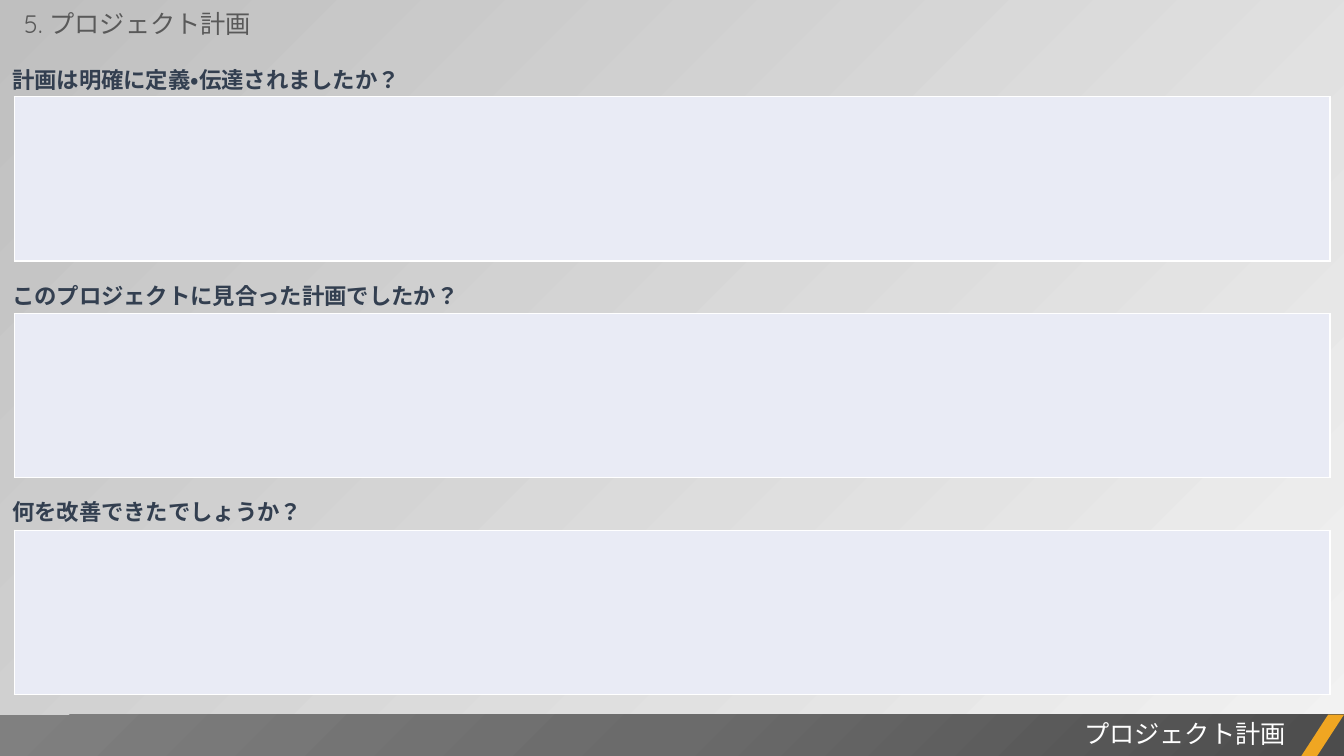
from lxml import etree
from pptx import Presentation
from pptx.dml.color import RGBColor
from pptx.enum import lang, shapes, text
from pptx.oxml import ns
from pptx.util import Inches, Pt

TITLE = "プロジェクト計画"
LABEL = dict(size=Pt(16), bold=True)
# label, label top, line spacing
ASKS = [
    ("計画は明確に定義・伝達されましたか？", 0.56, Pt(21.5)),
    ("このプロジェクトに見合った計画でしたか？", 2.71, Pt(21.5)),
    ("何を改善できたでしょうか？", 4.83, 1.2),
]


def rgb(code):
    return RGBColor.from_string(code)


def put(item, **vals):
    """Set each given attribute on the item."""
    for key, val in vals.items():
        setattr(item, key, val)


def node(top, tag, **attrs):
    """Append a DrawingML element."""
    return etree.SubElement(top, ns.qn("a:" + tag), attrs)


class Deck:
    font = "Quicksand"

    def __init__(self):
        self.prs = Presentation()
        put(self.prs, slide_width=Inches(13.33), slide_height=Inches(7.5))
        self.slide = self.prs.slides.add_slide(self.prs.slide_layouts[5])

    def shade(self, fill, root, stops, angle=None):
        """Give a gradient; without an angle it spreads from bottom right."""
        fill.gradient()
        grad = root.find(".//" + ns.qn("a:gradFill"))
        for kid in list(grad):
            grad.remove(kid)
        row = node(grad, "gsLst")
        for pos, code in stops:
            stop = node(row, "gs", pos=str(pos * 1000))
            node(stop, "srgbClr", val=code)
        if angle is None:
            way = node(grad, "path", path="circle")
            node(way, "fillToRect", l="100000", t="100000")
        else:
            node(grad, "lin", ang=str(angle * 60000), scaled="0")

    def letter(self, box, words, color, inset=(0.1, 0.05), para=None, **font):
        """Fill a box with one styled paragraph."""
        frame = box.text_frame
        side, edge = map(Inches, inset)
        put(frame, text=words, word_wrap=True,
            auto_size=text.MSO_AUTO_SIZE.SHAPE_TO_FIT_TEXT,
            vertical_anchor=text.MSO_ANCHOR.TOP,
            margin_left=side, margin_right=side,
            margin_top=edge, margin_bottom=edge)
        line = frame.paragraphs[0]
        put(line, **{"alignment": text.PP_ALIGN.LEFT, "line_spacing": 1.0,
                     **(para or {})})
        run = line.runs[0].font
        put(run, name=self.font, language_id=lang.MSO_LANGUAGE_ID.JAPANESE,
            **font)
        run.color.rgb = rgb(color)

    def title(self, words, at, color, **style):
        box = self.slide.shapes.title
        put(box, **dict(zip(("left", "top", "width", "height"),
                            map(Inches, at))))
        self.letter(box, words, color, **style)

    def label(self, words, at, color, **style):
        box = self.slide.shapes.add_textbox(*map(Inches, at))
        self.letter(box, words, color, **style)

    def shape(self, kind, at):
        """Add a plain shape with neither line nor shadow."""
        form = self.slide.shapes.add_shape(kind, *map(Inches, at))
        form.shadow.inherit = False
        form.line.fill.background()
        return form

    def panel(self, at, color, edge):
        """Add a one-cell table as an answer field."""
        grid = self.slide.shapes.add_table(1, 1, *map(Inches, at)).table
        put(grid, first_row=False, horz_banding=False)
        cell = grid.cell(0, 0)
        props = cell._tc.get_or_add_tcPr()
        for side in ("lnL", "lnR", "lnT", "lnB"):
            line = node(props, side, w=str(Pt(1)))
            node(node(line, "solidFill"), "srgbClr", val=edge)
        cell.fill.solid()
        cell.fill.fore_color.rgb = rgb(color)


def main():
    deck = Deck()
    back = deck.slide.background.fill
    deck.shade(back, deck.slide.element, [(0, "F2F2F2"), (100, "BFBFBF")], 225)

    for i, (ask, top, gap) in enumerate(ASKS):
        deck.panel((0.14, 0.96 + 2.15 * i, 13.05, 1.63), "E9EBF5", "FFFFFF")
        deck.label(ask, (0, top, 7.63, 0.4), "333F50", inset=(0.12, 0.06),
                   para=dict(line_spacing=gap, space_before=Pt(3.2)), **LABEL)

    bar = deck.shape(shapes.MSO_SHAPE.RECTANGLE, (0, 7.09, 13.33, 0.42))
    deck.shade(bar.fill, bar.element,
               [(0, "4C4C4C"), (50, "6B6B6B"), (100, "808080")])
    deck.label(TITLE, (5.25, 7.08, 7.6, 0.4), "FFFFFF", size=Pt(18),
               para=dict(alignment=text.PP_ALIGN.RIGHT))
    slash = deck.shape(shapes.MSO_SHAPE.PARALLELOGRAM,
                       (12.9, 7.09, 0.43, 0.42))
    slash.adjustments[0] = 0.65
    slash.fill.solid()
    slash.fill.fore_color.rgb = rgb("F0A622")
    deck.title("5. " + TITLE, (0.14, 0.03, 5.31, 0.4), "595959", size=Pt(18))
    deck.prs.save("out.pptx")


if __name__ == "__main__":
    main()
